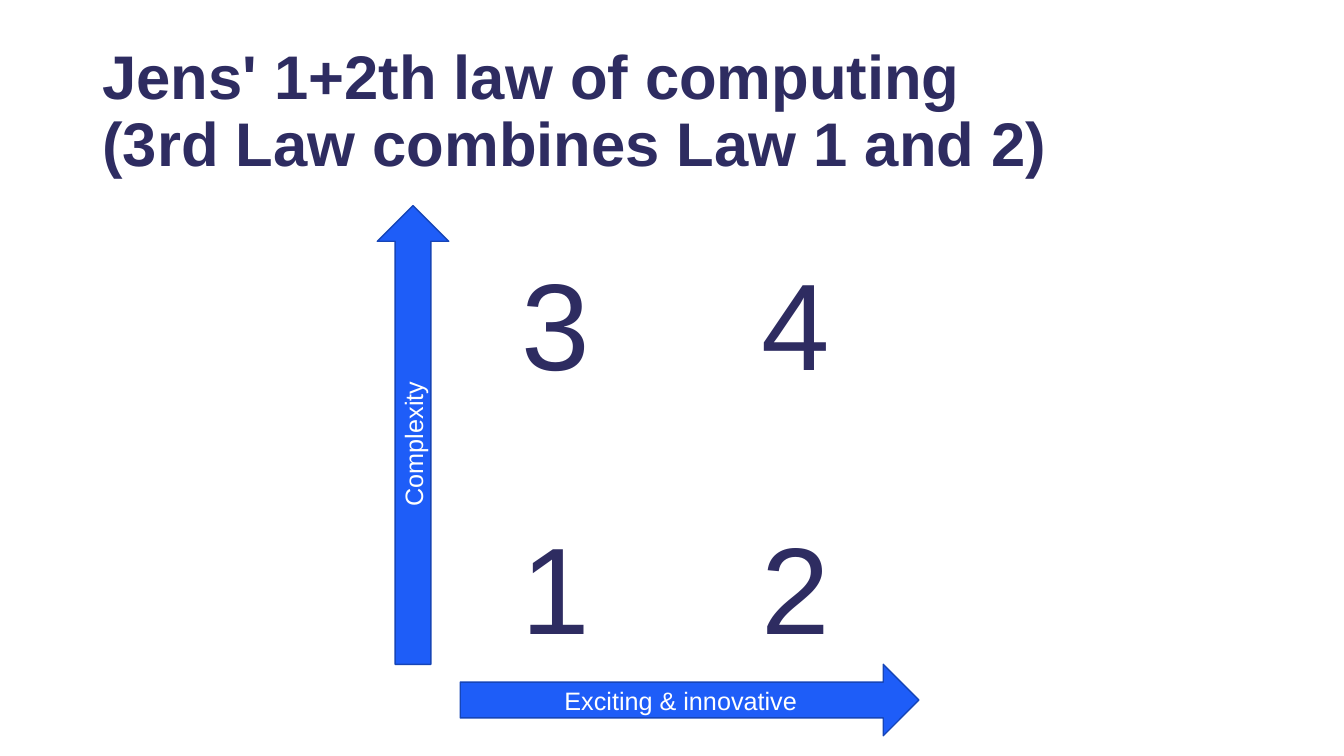
"""Build the slide on the third law of computing."""
from lxml.etree import SubElement
from pptx import Presentation
from pptx.dml.color import RGBColor
from pptx.enum.shapes import MSO_SHAPE
from pptx.enum.text import MSO_ANCHOR as ANCHOR, PP_ALIGN as ALIGN
from pptx.oxml.ns import qn
from pptx.util import Cm, Pt

TITLE = ["Jens' 1+2th\u00a0law of computing", "(3rd Law combines Law 1 and 2)"]
QUADRANTS = [("3", "4"), ("1", "2")]
AXES = [("Exciting & innovative", 17.38, 17.64, 0), ("Complexity", 10.41, 10.96, 270)]

NAVY = RGBColor(0x2E, 0x2C, 0x61)
BLUE = RGBColor(0x1E, 0x5D, 0xF8)
EDGE = RGBColor(0x16, 0x45, 0xB7)
WHITE = RGBColor(0xFF, 0xFF, 0xFF)

AXIS_LENGTH, AXIS_WIDTH = 11.56, 1.8
COLUMN_STEP = 6.04


def write(tf, lines, size, color, bold=False, align=ALIGN.LEFT, anchor=ANCHOR.MIDDLE,
          spacing=None, gap=0, tab=None):
    tf.word_wrap = True
    tf.vertical_anchor = anchor
    for i, line in enumerate(lines):
        p = tf.add_paragraph() if i else tf.paragraphs[0]
        p.alignment = align
        p.line_spacing = spacing
        if i and gap:
            p.space_before = Pt(gap)
        if tab:
            tabs = SubElement(p._p.get_or_add_pPr(), qn("a:tabLst"))
            SubElement(tabs, qn("a:tab"), pos=str(Cm(tab)), algn="l")
        r = p.add_run()
        r.text = line
        r.font.name, r.font.size, r.font.bold = "Arial", Pt(size), bold
        r.font.color.rgb = color


prs = Presentation()
prs.slide_width, prs.slide_height = Cm(33.87), Cm(19.05)
s = prs.slides.add_slide(prs.slide_layouts[6])

title = s.shapes.add_textbox(Cm(2.33), Cm(1.01), Cm(29.21), Cm(3.68))
write(title.text_frame, TITLE, 44, NAVY, bold=True, spacing=0.9)

for label, center_x, center_y, turn in AXES:
    sp = s.shapes.add_shape(
        MSO_SHAPE.RIGHT_ARROW, Cm(center_x - AXIS_LENGTH / 2), Cm(center_y - AXIS_WIDTH / 2),
        Cm(AXIS_LENGTH), Cm(AXIS_WIDTH))
    sp.rotation = turn
    sp.shadow.inherit = False
    sp.fill.solid()
    sp.fill.fore_color.rgb = BLUE
    sp.line.color.rgb = EDGE
    sp.line.width = Pt(1)
    write(sp.text_frame, [label], 18, WHITE, align=ALIGN.CENTER)

grid = s.shapes.add_textbox(Cm(12.9), Cm(5.82), Cm(10.52), Cm(10.59))
grid.text_frame.margin_top = Cm(0.42)
write(grid.text_frame, ["\t".join(row) for row in QUADRANTS], 88, NAVY,
      anchor=ANCHOR.TOP, gap=83, tab=COLUMN_STEP)

prs.save("out.pptx")
